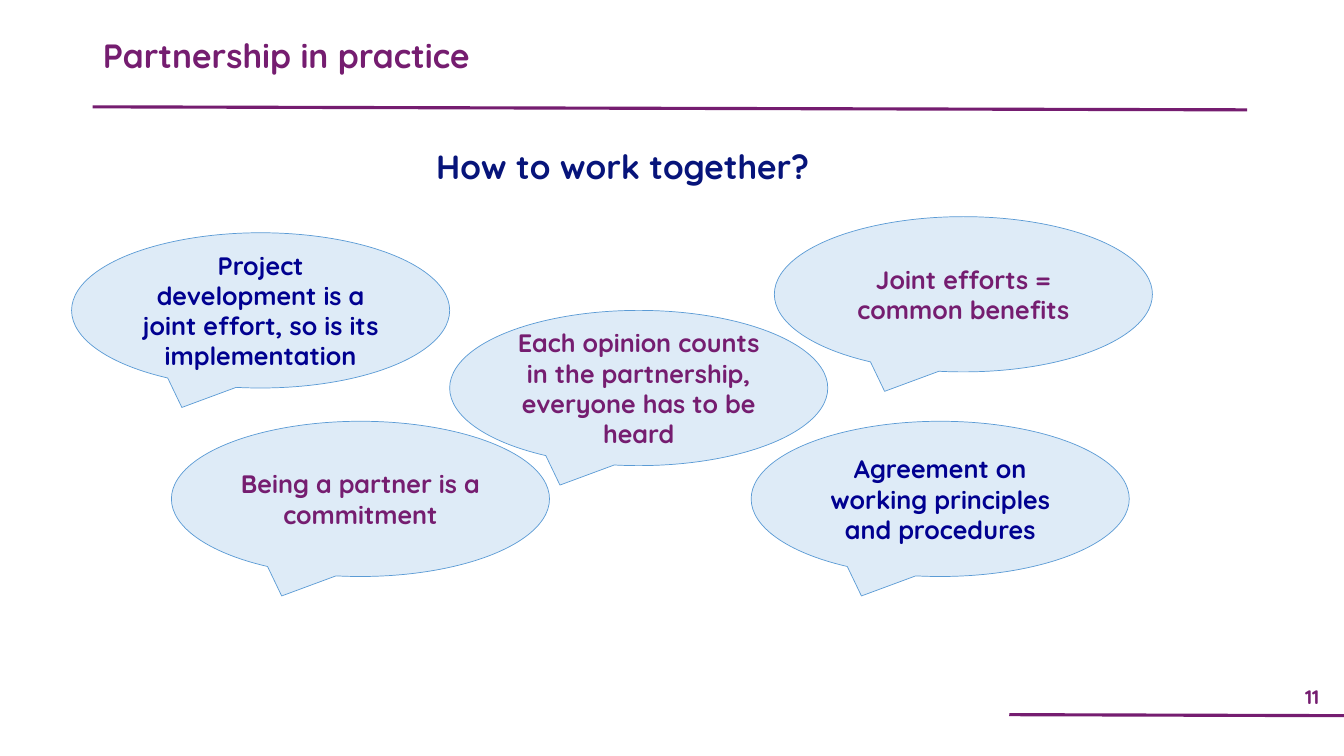
"""Build the "Partnership in practice" slide with its five speech bubbles."""
from dataclasses import dataclass

import lxml.etree
import pptx
import pptx.dml.color
import pptx.enum.shapes
import pptx.enum.text
import pptx.oxml.ns
import pptx.util

EMU_PER_PX = 9144
PURPLE, NAVY, BLUE = "751D70", "07147A", "000090"
BUBBLE_FILL, BUBBLE_LINE = "DEEBF7", "5B9BD5"
BUBBLE_W, BUBBLE_H = 375, 154
LEFT = pptx.enum.text.PP_ALIGN.LEFT
CENTER = pptx.enum.text.PP_ALIGN.CENTER
TOP = pptx.enum.text.MSO_ANCHOR.TOP
MIDDLE = pptx.enum.text.MSO_ANCHOR.MIDDLE


@dataclass
class Bubble:
    left: int
    top: int
    text: str
    color: str


@dataclass
class Rule:
    x1: int
    y1: int
    x2: int
    y2: int


BUBBLES = [
    Bubble(71, 231, "Project development is a joint effort, so is its implementation", BLUE),
    Bubble(446, 308, "Each opinion counts in the partnership, everyone has to be heard", PURPLE),
    Bubble(745, 418, "Agreement on working principles and procedures", BLUE),
    Bubble(768, 215, "Joint efforts = common benefits", PURPLE),
    Bubble(170, 418, "Being a partner is a commitment", PURPLE),
]
RULES = [Rule(92, 106, 1237, 109), Rule(1001, 709, 1335, 710)]


def px(n: int) -> pptx.util.Emu:
    return pptx.util.Emu(n * EMU_PER_PX)


def rgb(color: str) -> pptx.dml.color.RGBColor:
    return pptx.dml.color.RGBColor.from_string(color)


def set_all(target, values: dict) -> None:
    for name, value in values.items():
        setattr(target, name, value)


def place(sp, left: int, top: int, width: int, height: int) -> None:
    set_all(sp, {"left": px(left), "top": px(top), "width": px(width), "height": px(height)})


def write(sp, text: str, size: int, color: str, align=CENTER, anchor=MIDDLE):
    tf = sp.text_frame
    set_all(tf, {"word_wrap": True, "vertical_anchor": anchor,
                 "auto_size": pptx.enum.text.MSO_AUTO_SIZE.NONE})
    p = tf.paragraphs[0]
    p.alignment = align
    r = p.add_run()
    r.text = text
    set_all(r.font, {"name": "Quicksand", "size": pptx.util.Pt(size), "bold": True})
    r.font.color.rgb = rgb(color)
    return p


def fill_placeholder(sp, box: tuple[int, int, int, int], text: str, color: str, align) -> None:
    place(sp, *box)
    p = write(sp, text, 24, color, align, TOP)
    set_all(p, {"line_spacing": 0.9, "space_before": pptx.util.Pt(0)})
    pPr = p._p.get_or_add_pPr()
    pPr.set("marL", "0")
    pPr.set("indent", "0")
    lxml.etree.SubElement(pPr, pptx.oxml.ns.qn("a:buNone"))


def add_rule(slide, rule: Rule) -> None:
    line = slide.shapes.add_connector(
        pptx.enum.shapes.MSO_CONNECTOR.STRAIGHT,
        px(rule.x1), px(rule.y1), px(rule.x2), px(rule.y2))
    line.line.color.rgb = rgb(PURPLE)
    line.line.width = pptx.util.Pt(2.25)
    lxml.etree.SubElement(line._element.spPr, pptx.oxml.ns.qn("a:effectLst"))


def add_bubble(slide, bubble: Bubble) -> None:
    sp = slide.shapes.add_shape(
        pptx.enum.shapes.MSO_SHAPE.OVAL_CALLOUT,
        px(bubble.left), px(bubble.top), px(BUBBLE_W), px(BUBBLE_H))
    sp.shadow.inherit = False
    sp.fill.solid()
    sp.fill.fore_color.rgb = rgb(BUBBLE_FILL)
    sp.line.color.rgb = rgb(BUBBLE_LINE)
    sp.line.width = pptx.util.Pt(0.5)
    write(sp, bubble.text, 18, bubble.color)


def main() -> None:
    prs = pptx.Presentation()
    set_all(prs, {"slide_width": px(1333), "slide_height": px(750)})
    slide = prs.slides.add_slide(prs.slide_layouts[1])
    title, body = slide.placeholders
    fill_placeholder(title, (92, 34, 973, 65), "Partnership in practice", PURPLE, LEFT)
    fill_placeholder(body, (92, 144, 1051, 494), "How to work together?", NAVY, CENTER)
    for rule in RULES:
        add_rule(slide, rule)
    number = slide.shapes.add_textbox(px(1270), px(673), px(63), px(36))
    write(number, "11", 14, PURPLE)
    for bubble in BUBBLES:
        add_bubble(slide, bubble)
    prs.save("out.pptx")


if __name__ == "__main__":
    main()
